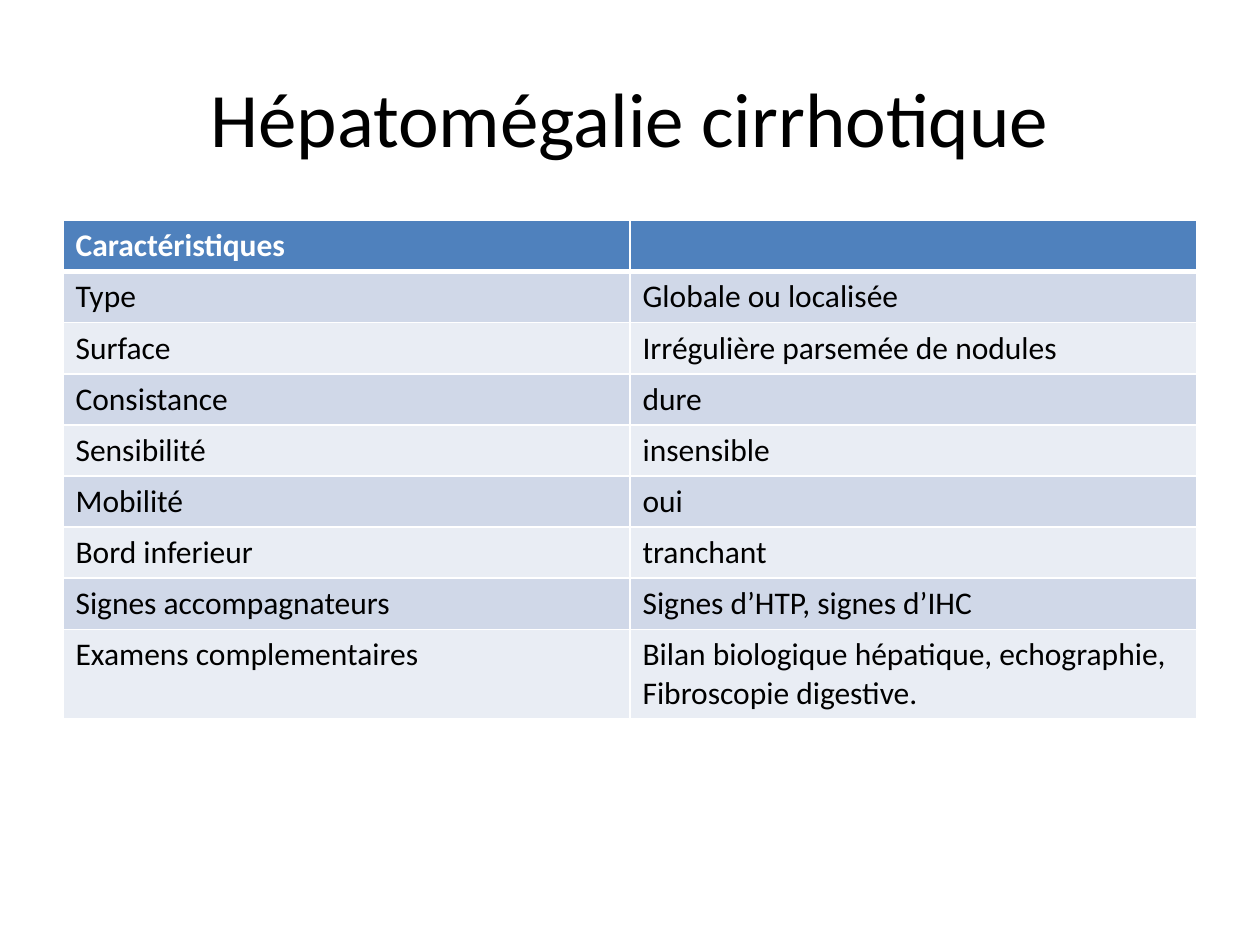
from typing import NamedTuple

from lxml.etree import SubElement
from pptx import Presentation
from pptx.dml.color import RGBColor
from pptx.enum.text import MSO_ANCHOR, PP_ALIGN
from pptx.oxml.ns import qn
from pptx.util import Inches, Pt

FONT = "Calibri"
BLACK, WHITE = "000000", "FFFFFF"
HEADER_FILL = "4F81BD"
BAND_FILLS = ("D0D8E8", "E9EDF4")
ROW_HEIGHT = Pt(29.2)
LAST_ROW_HEIGHT = Inches(0.7)


class Characteristic(NamedTuple):
    name: str
    finding: str


HEADER = Characteristic("Caractéristiques", "")
CHARACTERISTICS = [
    Characteristic("Type", "Globale ou localisée"),
    Characteristic("Surface", "Irrégulière parsemée de nodules"),
    Characteristic("Consistance", "dure"),
    Characteristic("Sensibilité", "insensible"),
    Characteristic("Mobilité", "oui"),
    Characteristic("Bord inferieur", "tranchant"),
    Characteristic("Signes accompagnateurs", "Signes d’HTP, signes d’IHC"),
    Characteristic("Examens complementaires",
                   "Bilan biologique hépatique, echographie, Fibroscopie digestive."),
]


def color(value: str) -> RGBColor:
    return RGBColor.from_string(value)


def add_run(paragraph, text: str, size: float, text_color: str, bold: bool = False) -> None:
    run = paragraph.add_run()
    run.text = text
    run.font.name = FONT
    run.font.size = Pt(size)
    run.font.bold = bold
    run.font.color.rgb = color(text_color)


def add_borders(cell, top: float, bottom: float) -> None:
    """Draw white cell borders; widths are in points and the sides are 1 pt."""
    properties = cell._tc.get_or_add_tcPr()
    for side, width in (("L", 1), ("R", 1), ("T", top), ("B", bottom)):
        line = SubElement(properties, qn(f"a:ln{side}"), w=str(Pt(width)))
        fill = SubElement(line, qn("a:solidFill"))
        SubElement(fill, qn("a:srgbClr"), val=WHITE)


def fill_row(table, index: int, row: Characteristic) -> None:
    is_header = index == 0
    fill = HEADER_FILL if is_header else BAND_FILLS[(index - 1) % 2]
    for column, text in enumerate(row):
        cell = table.cell(index, column)
        add_borders(cell, top=3 if index == 1 else 1, bottom=3 if is_header else 1)
        cell.fill.solid()
        cell.fill.fore_color.rgb = color(fill)
        if text:
            add_run(cell.text_frame.paragraphs[0], text, 18,
                    WHITE if is_header else BLACK, is_header)


def add_title(slide, text: str) -> None:
    title = slide.shapes.title
    title.left, title.top = Inches(0.5), Inches(0.3)
    title.width, title.height = Inches(9), Inches(1.25)
    title.text_frame.vertical_anchor = MSO_ANCHOR.MIDDLE
    paragraph = title.text_frame.paragraphs[0]
    paragraph.alignment = PP_ALIGN.CENTER
    add_run(paragraph, text, 44, BLACK)


def add_characteristics_table(slide) -> None:
    rows = [HEADER, *CHARACTERISTICS]
    height = ROW_HEIGHT * (len(rows) - 1) + LAST_ROW_HEIGHT
    table = slide.shapes.add_table(
        len(rows), 2, Inches(0.5), Inches(1.75), Inches(9), height).table
    for index, row in enumerate(rows):
        table.rows[index].height = ROW_HEIGHT
        fill_row(table, index, row)
    table.rows[len(rows) - 1].height = LAST_ROW_HEIGHT


def main() -> None:
    presentation = Presentation()
    presentation.slide_width, presentation.slide_height = Inches(10), Inches(7.5)
    slide = presentation.slides.add_slide(presentation.slide_layouts[5])
    add_title(slide, "Hépatomégalie cirrhotique")
    add_characteristics_table(slide)
    presentation.save("out.pptx")


if __name__ == "__main__":
    main()
